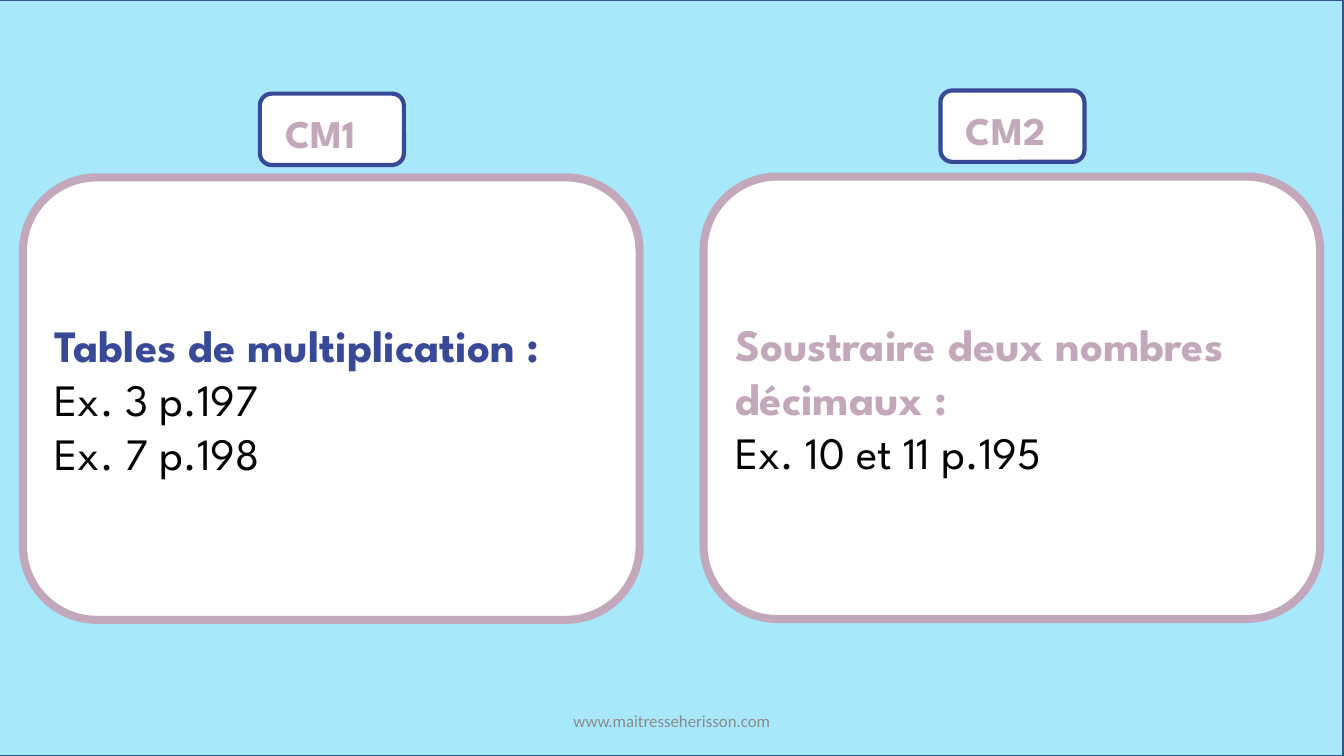
import pptx
import pptx.util
import pptx.dml.color
import pptx.enum.shapes
import pptx.enum.text

Cm = pptx.util.Cm
Pt = pptx.util.Pt
RGBColor = pptx.dml.color.RGBColor
Shape = pptx.enum.shapes.MSO_SHAPE
Anchor = pptx.enum.text.MSO_ANCHOR
Align = pptx.enum.text.PP_ALIGN

SKY = RGBColor(0xA7, 0xE8, 0xFB)
EDGE = RGBColor(0x32, 0x54, 0x91)
BLUE = RGBColor(0x37, 0x49, 0x97)
MAUVE = RGBColor(0xC3, 0xA7, 0xBA)
GREY = RGBColor(0x8C, 0x8C, 0x8C)
WHITE = RGBColor(0xFF, 0xFF, 0xFF)
BLACK = RGBColor(0, 0, 0)
HEADING_FONT = "League Spartan"

LEVELS = [
    {"name": "CM1", "left": 0.58, "panel_top": 4.47, "tag_top": 2.36,
     "title": "Tables de multiplication :", "color": BLUE,
     "exercises": ["Ex. 3 p.197", "Ex. 7 p.198"]},
    {"name": "CM2", "left": 17.73, "panel_top": 4.45, "tag_top": 2.28,
     "title": "Soustraire deux nombres décimaux :", "color": MAUVE,
     "exercises": ["Ex. 10 et 11 p.195"]},
]
WEBSITE = "www.maitresseherisson.com"

PAGE_WIDTH, PAGE_HEIGHT = 33.87, 19.05
PANEL_WIDTH, PANEL_HEIGHT = 15.54, 11.15
TAG_WIDTH, TAG_HEIGHT = 3.63, 1.8
TAG_SHIFT = 5.97


def add_block(page, kind, left, top, width, height, fill, line, weight):
    block = page.shapes.add_shape(kind, Cm(left), Cm(top), Cm(width), Cm(height))
    block.shadow.inherit = False
    block.fill.solid()
    block.fill.fore_color.rgb = fill
    block.line.color.rgb = line
    block.line.width = Pt(weight)
    return block


def add_label(page, left, top, width, height):
    box = page.shapes.add_textbox(Cm(left), Cm(top), Cm(width), Cm(height))
    box.text_frame.word_wrap = True
    return box


def write(frame, lines, align=Align.LEFT):
    for index, (text, font, size, color, bold) in enumerate(lines):
        para = frame.add_paragraph() if index else frame.paragraphs[0]
        para.text = text
        para.alignment = align
        para.font.name = font
        para.font.size = Pt(size)
        para.font.color.rgb = color
        para.font.bold = bold


def add_level(page, level):
    tag_left = level["left"] + TAG_SHIFT
    add_block(page, Shape.ROUNDED_RECTANGLE, tag_left, level["tag_top"],
              TAG_WIDTH, TAG_HEIGHT, WHITE, BLUE, 3)
    label = add_label(page, tag_left + 0.39, level["tag_top"] + 0.28, 2.8, 1.45)
    write(label.text_frame, [(level["name"], HEADING_FONT, 28, MAUVE, True)])

    panel = add_block(page, Shape.ROUNDED_RECTANGLE, level["left"], level["panel_top"],
                      PANEL_WIDTH, PANEL_HEIGHT, WHITE, MAUVE, 5.75)
    panel.text_frame.word_wrap = True
    panel.text_frame.vertical_anchor = Anchor.MIDDLE
    lines = [(level["title"], HEADING_FONT, 32, level["color"], True)]
    lines += [(text, HEADING_FONT, 32, BLACK, False) for text in level["exercises"]]
    write(panel.text_frame, lines)


def main():
    deck = pptx.Presentation()
    deck.slide_width, deck.slide_height = Cm(PAGE_WIDTH), Cm(PAGE_HEIGHT)
    page = deck.slides.add_slide(deck.slide_layouts[6])
    add_block(page, Shape.RECTANGLE, -0.02, 0, PAGE_WIDTH, PAGE_HEIGHT, SKY, EDGE, 1)
    for level in LEVELS:
        add_level(page, level)
    footer = add_label(page, 11.22, 17.66, 11.43, 1.01)
    footer.text_frame.vertical_anchor = Anchor.MIDDLE
    write(footer.text_frame, [(WEBSITE, "Calibri", 12, GREY, False)], Align.CENTER)
    deck.save("out.pptx")


if __name__ == "__main__":
    main()
